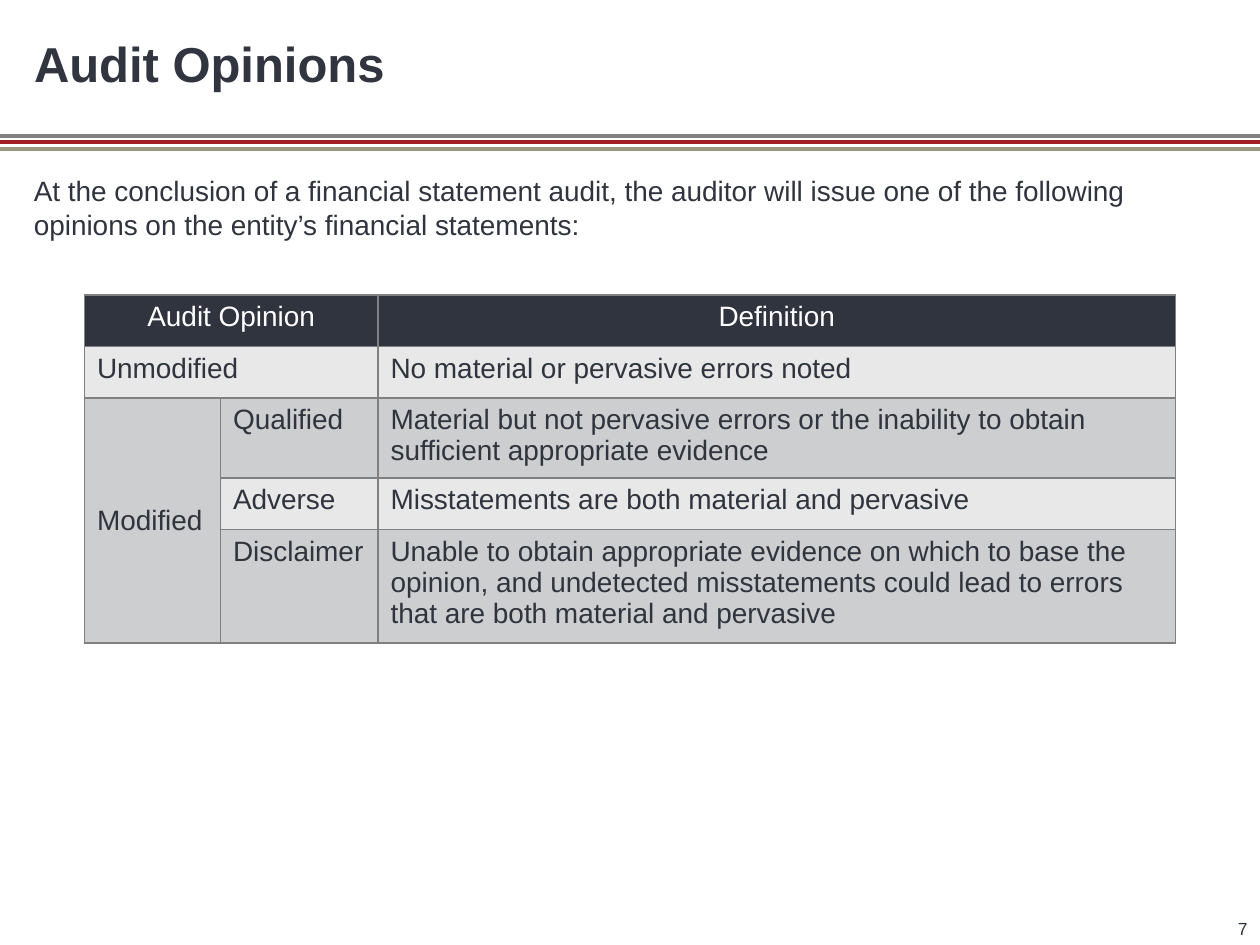
from dataclasses import dataclass

from lxml.etree import SubElement
from pptx import Presentation
from pptx.dml.color import RGBColor as RGB
from pptx.enum.shapes import MSO_CONNECTOR as Connector
from pptx.enum.text import MSO_ANCHOR as Anchor, PP_ALIGN as Align
from pptx.oxml.ns import qn
from pptx.util import Inches, Pt


@dataclass(frozen=True)
class Theme:
    font: str = "Arial"
    title_color: str = "313540"
    ink: str = "30343F"
    white: str = "FFFFFF"
    light: str = "E8E8E8"
    dark: str = "CDCECF"
    border: str = "808080"
    rules: tuple = ("808080", "A11D24", "9A977C")
    title_size: int = 28
    text_size: int = 16
    number_size: int = 10


THEME = Theme()
HEADER = ("Audit Opinion", None, "Definition")
OPINIONS = [
    ("Unmodified", None, "No material or pervasive errors noted"),
    ("Modified", "Qualified", "Material but not pervasive errors or the "
     "inability to obtain sufficient appropriate evidence"),
    (None, "Adverse", "Misstatements are both material and pervasive"),
    (None, "Disclaimer", "Unable to obtain appropriate evidence on which to "
     "base the opinion, and undetected misstatements could lead to errors "
     "that are both material and pervasive"),
]
COLUMN_WIDTHS = (1.08, 1.25, 6.33)
ROW_HEIGHTS = (0.41, 0.41, 0.59, 0.41, 0.84)


def write(frame, text, size, color, align=Align.LEFT, bold=False):
    frame.text = text
    para = frame.paragraphs[0]
    para.alignment = align
    for span in para.runs:
        span.font.name = THEME.font
        span.font.size = Pt(size)
        span.font.bold = bold
        span.font.color.rgb = RGB.from_string(color)


def add_title(page, left, top, width, height):
    title = page.shapes.title
    title.left, title.top = Inches(left), Inches(top)
    title.width, title.height = Inches(width), Inches(height)
    title.text_frame.vertical_anchor = Anchor.MIDDLE
    write(title.text_frame, "Audit Opinions", THEME.title_size,
          THEME.title_color, bold=True)


def add_rules(page, left, top, width, gap):
    for index, color in enumerate(THEME.rules):
        y = Inches(top + index * gap)
        rule = page.shapes.add_connector(
            Connector.STRAIGHT, Inches(left), y, Inches(left + width), y)
        rule.line.color.rgb = RGB.from_string(color)
        rule.line.width = Pt(2.25)
        SubElement(rule._element.spPr, qn("a:effectLst"))


def add_text(page, left, top, width, height, text, size, color,
             align=Align.LEFT, anchor=Anchor.TOP):
    box = page.shapes.add_textbox(
        Inches(left), Inches(top), Inches(width), Inches(height))
    box.text_frame.word_wrap = True
    box.text_frame.vertical_anchor = anchor
    write(box.text_frame, text, size, color, align)


def set_borders(cell):
    properties = cell._tc.get_or_add_tcPr()
    # Borders come before the fill in the cell properties
    for index, side in enumerate(("a:lnL", "a:lnR", "a:lnT", "a:lnB")):
        line = properties.makeelement(qn(side), {"w": str(Pt(1))})
        fill = SubElement(line, qn("a:solidFill"))
        SubElement(fill, qn("a:srgbClr"), val=THEME.border)
        properties.insert(index, line)


def add_opinion_table(page, left, top):
    rows = [HEADER, *OPINIONS]
    table = page.shapes.add_table(
        len(rows), len(COLUMN_WIDTHS), Inches(left), Inches(top),
        Inches(sum(COLUMN_WIDTHS)), Inches(sum(ROW_HEIGHTS))).table
    for column, width in zip(table.columns, COLUMN_WIDTHS):
        column.width = Inches(width)
    for row, height in zip(table.rows, ROW_HEIGHTS):
        row.height = Inches(height)

    # Cells: dark header, then alternating bands
    for r, texts in enumerate(rows):
        is_header = r == 0
        band = THEME.light if r % 2 else THEME.dark
        fill = THEME.ink if is_header else band
        for c, text in enumerate(texts):
            cell = table.cell(r, c)
            cell.fill.solid()
            cell.fill.fore_color.rgb = RGB.from_string(fill)
            set_borders(cell)
            if text:
                write(cell.text_frame, text, THEME.text_size,
                      THEME.white if is_header else THEME.ink,
                      Align.CENTER if is_header else Align.LEFT)

    # Merged labels
    for r in (0, 1):
        table.cell(r, 0).merge(table.cell(r, 1))
    modified = table.cell(2, 0)
    modified.merge(table.cell(4, 0))
    modified.vertical_anchor = Anchor.MIDDLE


def main():
    deck = Presentation()
    deck.slide_width, deck.slide_height = Inches(10), Inches(7.5)
    page = deck.slides.add_slide(deck.slide_layouts[5])
    add_rules(page, 0, 1.08, 10, 0.05)
    add_title(page, 0.17, 0, 8.17, 1)
    # Introduction
    add_text(page, 0.17, 1.33, 9.67, 0.7,
             "At the conclusion of a financial statement audit, the auditor "
             "will issue one of the following opinions on the entity’s "
             "financial statements:", THEME.text_size, THEME.ink)
    add_opinion_table(page, 0.67, 2.34)
    # Page number
    add_text(page, 7.67, 7.1, 2.33, 0.4, "7", THEME.number_size,
             THEME.title_color, Align.RIGHT, Anchor.BOTTOM)
    deck.save("out.pptx")


if __name__ == "__main__":
    main()
